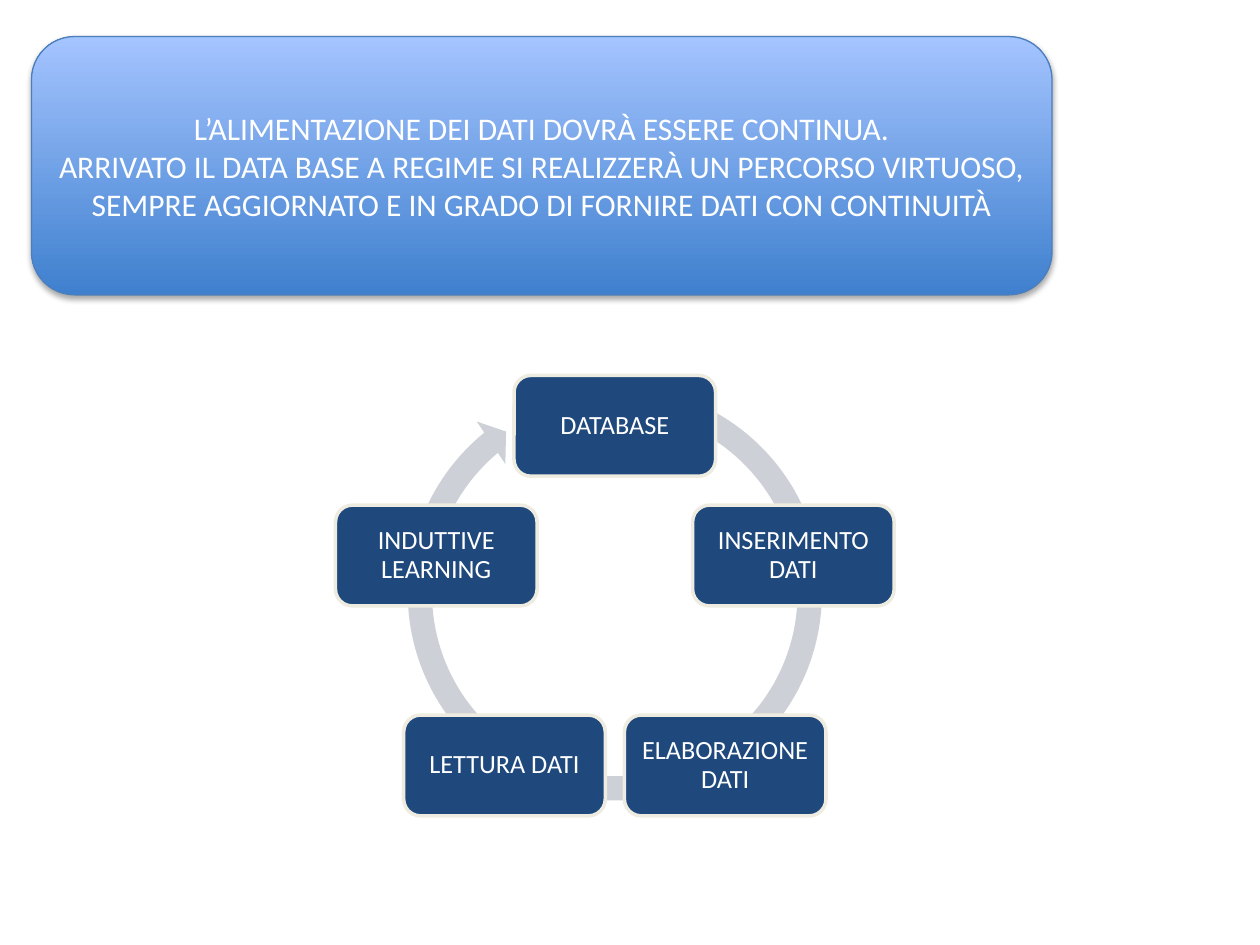
from dataclasses import dataclass
from math import cos, pi, sin

from lxml.etree import SubElement
from pptx import Presentation
from pptx.dml.color import RGBColor
from pptx.enum.shapes import MSO_SHAPE
from pptx.enum.text import MSO_ANCHOR, PP_ALIGN
from pptx.oxml.ns import qn
from pptx.util import Emu, Inches, Pt


@dataclass(frozen=True)
class Theme:
    font: str = "Calibri"
    text: str = "FFFFFF"
    banner_low: str = "3F80CE"
    banner_high: str = "A4C4FF"
    banner_line: str = "4B7EBC"
    node: str = "1F497D"
    node_line: str = "EEECE1"
    ring: str = "CDD0D7"
    shadow: str = "000000"
    banner_size: int = 18
    node_size: int = 15


THEME = Theme()
WIDTH, HEIGHT = 10, 7.5

BANNER = (
    "L’ALIMENTAZIONE DEI DATI DOVRÀ ESSERE CONTINUA.",
    "ARRIVATO IL DATA BASE A REGIME SI REALIZZERÀ UN PERCORSO VIRTUOSO, "
    "SEMPRE AGGIORNATO E IN GRADO DI FORNIRE DATI CON CONTINUITÀ",
)
# Clockwise from the top
STEPS = ("DATABASE", "INSERIMENTO DATI", "ELABORAZIONE DATI",
         "LETTURA DATI", "INDUTTIVE LEARNING")


def rgb(value):
    return RGBColor.from_string(value)


def add_box(s, kind, left, top, width, height, fill=None, line=None, line_width=1):
    sp = s.shapes.add_shape(kind, *map(Inches, (left, top, width, height)))
    sp.shadow.inherit = False
    if fill:
        sp.fill.solid()
        sp.fill.fore_color.rgb = rgb(fill)
    if line:
        sp.line.color.rgb = rgb(line)
        sp.line.width = Pt(line_width)
    else:
        sp.line.fill.background()
    return sp


def write(sp, *paragraphs, size, spacing=1.0, inset=None):
    tf = sp.text_frame
    tf.word_wrap = True
    tf.vertical_anchor = MSO_ANCHOR.MIDDLE
    if inset is not None:
        tf.margin_left = tf.margin_right = Inches(inset)
        tf.margin_top = tf.margin_bottom = Inches(inset)
    for i, text in enumerate(paragraphs):
        p = tf.add_paragraph() if i else tf.paragraphs[0]
        p.alignment = PP_ALIGN.CENTER
        p.line_spacing = spacing
        r = p.add_run()
        r.text = text
        r.font.name = THEME.font
        r.font.size = Pt(size)
        r.font.color.rgb = rgb(THEME.text)


def add_shadow(sp, blur, distance, opacity):
    effects = sp._element.spPr.find(qn("a:effectLst"))
    shadow = SubElement(effects, qn("a:outerShdw"), blurRad=str(Pt(blur)),
                        dist=str(Pt(distance)), dir="5400000", rotWithShape="0")
    color = SubElement(shadow, qn("a:srgbClr"), val=THEME.shadow)
    SubElement(color, qn("a:alpha"), val=str(opacity * 1000))


def add_banner(s):
    sp = add_box(s, MSO_SHAPE.ROUNDED_RECTANGLE, 0.25, 0.29, 8.1, 2.05,
                 line=THEME.banner_line, line_width=0.75)
    sp.fill.gradient()
    sp.fill.gradient_angle = 90
    for stop, color in zip(sp.fill.gradient_stops,
                           (THEME.banner_low, THEME.banner_high)):
        stop.color.rgb = rgb(color)
    add_shadow(sp, blur=3.1, distance=1.8, opacity=35)
    write(sp, *BANNER, size=THEME.banner_size)


def add_ring(s, cx, cy, size):
    sp = add_box(s, MSO_SHAPE.CIRCULAR_ARROW, cx - size / 2, cy - size / 2,
                 size, size, fill=THEME.ring)
    # Thickness, head angle, end angle, start angle, head width
    for i, value in enumerate((0.055, 3.307, 138.355, 173.498, 0.058)):
        sp.adjustments[i] = value


def add_cycle(s, cx, cy, radius, width=1.6, height=0.8):
    for i, step in enumerate(STEPS):
        angle = 2 * pi * i / len(STEPS)
        x, y = cx + radius * sin(angle), cy - radius * cos(angle)
        sp = add_box(s, MSO_SHAPE.ROUNDED_RECTANGLE, x - width / 2, y - height / 2,
                     width, height, fill=THEME.node, line=THEME.node_line,
                     line_width=2)
        write(sp, step, size=THEME.node_size, spacing=0.9, inset=0.06)


def main():
    prs = Presentation()
    prs.slide_width, prs.slide_height = Emu(Inches(WIDTH)), Emu(Inches(HEIGHT))
    s = prs.slides.add_slide(prs.slide_layouts[6])

    # Message at the top
    add_banner(s)

    # Cycle of steps on the circular arrow
    add_ring(s, cx=4.88, cy=4.71, size=3.5)
    add_cycle(s, cx=4.88, cy=4.87, radius=1.49)

    prs.save("out.pptx")


if __name__ == "__main__":
    main()
